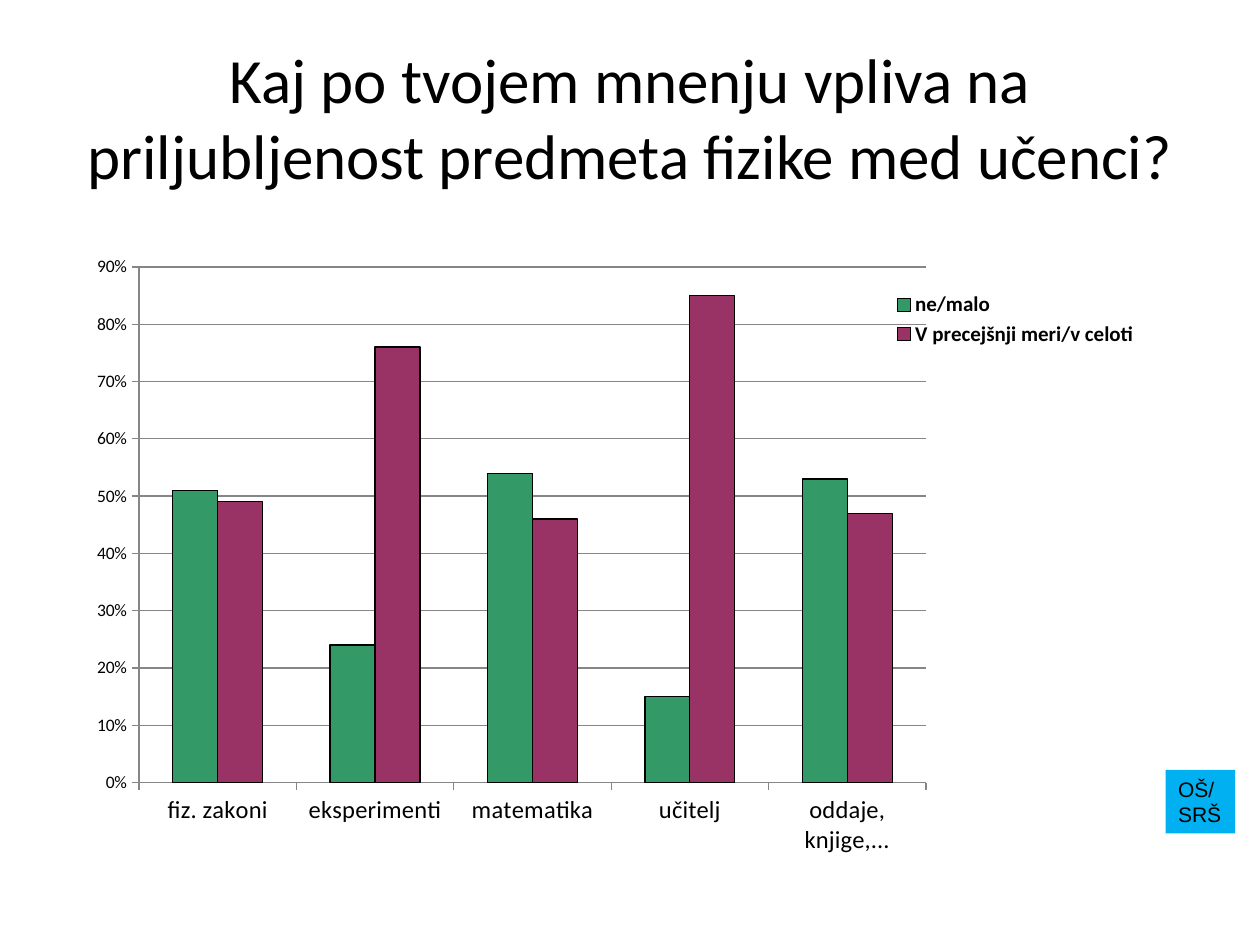
from dataclasses import dataclass

from lxml.etree import SubElement
from pptx import Presentation
from pptx.chart.data import CategoryChartData
from pptx.dml.color import RGBColor
from pptx.enum.chart import XL_CHART_TYPE, XL_LEGEND_POSITION, XL_TICK_MARK
from pptx.enum.shapes import MSO_SHAPE
from pptx.enum.text import MSO_ANCHOR, PP_ALIGN
from pptx.oxml.ns import qn
from pptx.util import Cm, Pt


@dataclass(frozen=True)
class Theme:
    heading_font: str = "Calibri"
    label_font: str = "Arial"
    text: str = "000000"
    grid: str = "868686"
    little: str = "339966"
    much: str = "993366"
    badge: str = "00B0F0"
    title_size: int = 36
    category_size: int = 14
    label_size: int = 12
    value_size: int = 10


def assign(target, values):
    for name, value in values.items():
        setattr(target, name, value)


def place_in_chart(element, index, values):
    for old_layout in element.findall(qn("c:layout")):
        element.remove(old_layout)
    layout = SubElement(element, qn("c:layout"))
    manual = SubElement(layout, qn("c:manualLayout"))
    for name, value in values.items():
        SubElement(manual, qn(f"c:{name}")).set("val", str(value))
    element.insert(index, layout)


class SlideBuilder:
    def __init__(self, slide, theme):
        self.slide = slide
        self.theme = theme

    def style_font(self, font, name, size, bold=False):
        assign(font, {"name": name, "size": Pt(size), "bold": bold})
        font.color.rgb = RGBColor.from_string(self.theme.text)

    def style_line(self, line, color):
        line.color.rgb = RGBColor.from_string(color)
        line.width = Pt(0.75)

    def add_title(self, text, bounds):
        title = self.slide.shapes.title
        assign(title, bounds)
        assign(title.text_frame, {"text": text, "word_wrap": True,
                                  "vertical_anchor": MSO_ANCHOR.MIDDLE})
        para = title.text_frame.paragraphs[0]
        para.alignment = PP_ALIGN.CENTER
        self.style_font(para.runs[0].font, self.theme.heading_font, self.theme.title_size)

    def add_column_chart(self, categories, series, bounds):
        theme = self.theme
        data = CategoryChartData(number_format="0%")
        data.categories = categories
        for name, values, _ in series:
            data.add_series(name, values)
        frame = self.slide.shapes.add_chart(
            XL_CHART_TYPE.COLUMN_CLUSTERED, *bounds.values(), data)
        chart = frame.chart
        assign(chart, {"has_title": False, "has_legend": True})
        self.style_font(chart.font, theme.heading_font, theme.value_size)

        plot = chart.plots[0]
        assign(plot, {"vary_by_categories": False, "gap_width": 150, "overlap": 0})
        for column, (_, _, color) in zip(plot.series, series):
            column.format.fill.solid()
            column.format.fill.fore_color.rgb = RGBColor.from_string(color)
            column.invert_if_negative = False
            self.style_line(column.format.line, theme.text)

        for axis, size in ((chart.category_axis, theme.category_size),
                           (chart.value_axis, theme.value_size)):
            axis.major_tick_mark = XL_TICK_MARK.OUTSIDE
            self.style_line(axis.format.line, theme.grid)
            self.style_font(axis.tick_labels.font, theme.heading_font, size)
        assign(chart.value_axis, {"minimum_scale": 0, "maximum_scale": 0.9,
                                  "major_unit": 0.1, "has_major_gridlines": True})
        assign(chart.value_axis.tick_labels, {"number_format": "0%",
                                              "number_format_is_linked": False})
        self.style_line(chart.value_axis.major_gridlines.format.line, theme.grid)

        legend = chart.legend
        assign(legend, {"position": XL_LEGEND_POSITION.RIGHT, "include_in_layout": False})
        self.style_font(legend.font, theme.heading_font, theme.label_size, True)
        place_in_chart(legend._element, 1, {
            "xMode": "edge", "yMode": "edge", "x": 0.715, "y": 0.07, "w": 0.23, "h": 0.1})
        plot_area = chart._chartSpace.find(f".//{qn('c:plotArea')}")
        place_in_chart(plot_area, 0, {
            "layoutTarget": "inner", "xMode": "edge", "yMode": "edge",
            "x": 0.057, "y": 0.036, "w": 0.694, "h": 0.827})

    def add_badge(self, text, bounds):
        box = self.slide.shapes.add_shape(MSO_SHAPE.RECTANGLE, *bounds.values())
        box.shadow.inherit = False
        box.fill.solid()
        box.fill.fore_color.rgb = RGBColor.from_string(self.theme.badge)
        box.line.fill.background()
        assign(box.text_frame, {"text": text, "word_wrap": True,
                                "vertical_anchor": MSO_ANCHOR.TOP})
        para = box.text_frame.paragraphs[0]
        para.alignment = PP_ALIGN.LEFT
        self.style_font(para.runs[0].font, self.theme.label_font, self.theme.label_size)


def main():
    theme = Theme()
    deck = Presentation()
    assign(deck, {"slide_width": Cm(25.4), "slide_height": Cm(19.05)})
    page = SlideBuilder(deck.slides.add_slide(deck.slide_layouts[5]), theme)
    page.add_title(
        "Kaj po tvojem mnenju vpliva na priljubljenost predmeta fizike med učenci?",
        {"left": Cm(1.27), "top": Cm(0.76), "width": Cm(22.86), "height": Cm(3.18)})
    page.add_column_chart(
        ["fiz. zakoni", "eksperimenti", "matematika", "učitelj", "oddaje, knjige,..."],
        [("ne/malo", (0.51, 0.24, 0.54, 0.15, 0.53), theme.little),
         ("V precejšnji meri/v celoti", (0.49, 0.76, 0.46, 0.85, 0.47), theme.much)],
        {"left": Cm(1.5), "top": Cm(4.93), "width": Cm(22.86), "height": Cm(12.57)})
    page.add_badge(
        "OŠ/SRŠ",
        {"left": Cm(23.5), "top": Cm(15.52), "width": Cm(1.4), "height": Cm(1.28)})
    deck.save("out.pptx")


if __name__ == "__main__":
    main()
